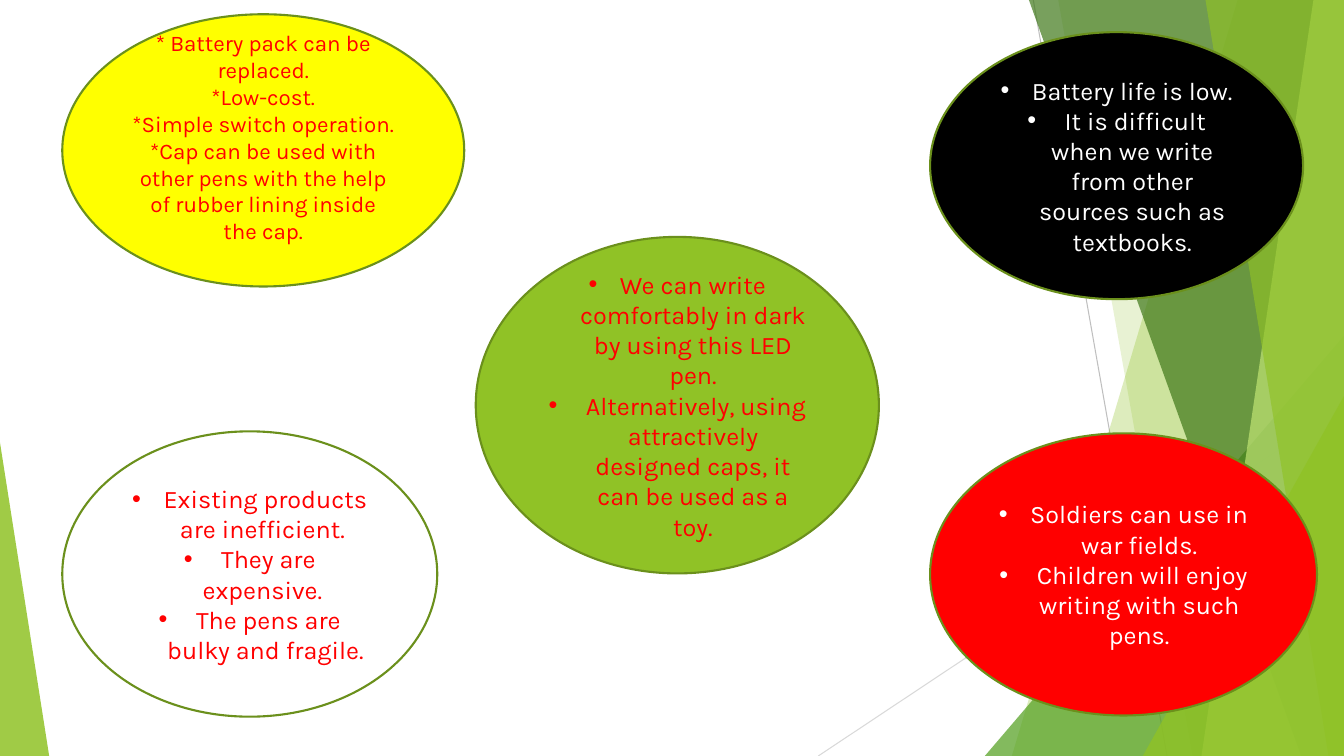
from lxml.etree import SubElement
from pptx import Presentation
from pptx.dml.color import RGBColor
from pptx.enum.shapes import MSO_CONNECTOR, MSO_SHAPE
from pptx.enum.text import MSO_ANCHOR, PP_ALIGN
from pptx.oxml.ns import qn
from pptx.util import Cm, Pt

WIDTH, HEIGHT = 33.87, 19.05
WHITE = RGBColor(0xFF, 0xFF, 0xFF)
BLACK = RGBColor(0x00, 0x00, 0x00)
RED = RGBColor(0xFF, 0x00, 0x00)
YELLOW = RGBColor(0xFF, 0xFF, 0x00)
GREEN = RGBColor(0x90, 0xC2, 0x26)
MID_GREEN = RGBColor(0x54, 0xA0, 0x21)
DARK_GREEN = RGBColor(0x3F, 0x78, 0x19)
PALE_GREEN = RGBColor(0xC0, 0xE4, 0x74)
OUTLINE = RGBColor(0x6B, 0x90, 0x1C)
GREY = RGBColor(0xBF, 0xBF, 0xBF)
LIGHT_GREY = RGBColor(0xD9, 0xD9, 0xD9)


def write(para, text, size=18, color=RED, font="Karla", bullet=True):
    para.alignment = PP_ALIGN.CENTER
    span = para.add_run()
    span.text = text
    span.font.name = font
    span.font.size = Pt(size)
    span.font.color.rgb = color
    if bullet:
        properties = para._p.get_or_add_pPr()
        properties.set("marL", str(Cm(0.79)))
        properties.set("indent", str(-Cm(0.79)))
        SubElement(properties, qn("a:buFont"), typeface="Arial")
        SubElement(properties, qn("a:buChar"), char="•")


class PenSlide:
    """Draws the facets and the ovals of one slide in a shared style."""

    def __init__(self, page, outline=OUTLINE):
        self.page = page
        self.outline = outline

    def line(self, start, end, color):
        points = [Cm(value) for value in (*start, *end)]
        connector = self.page.shapes.add_connector(MSO_CONNECTOR.STRAIGHT, *points)
        connector.line.color.rgb = color
        connector.line.width = Pt(0.75)
        SubElement(connector._element.spPr, qn("a:effectLst"))

    def tint(self, shape, color, opacity):
        shape.shadow.inherit = False
        shape.fill.solid()
        shape.fill.fore_color.rgb = color
        shape.line.fill.background()
        fill = shape._element.spPr.find(qn("a:solidFill"))
        SubElement(fill[0], qn("a:alpha"), val=str(opacity * 1000))

    def facet(self, top_x, bottom_x, color, opacity):
        corners = [(WIDTH, 0), (WIDTH, HEIGHT), (bottom_x, HEIGHT)]
        builder = self.page.shapes.build_freeform(Cm(top_x), Cm(0))
        builder.add_line_segments([(Cm(x), Cm(y)) for x, y in corners], close=True)
        self.tint(builder.convert_to_shape(), color, opacity)

    def triangle(self, left, top, width, apex, color, opacity):
        place = [Cm(value) for value in (left, top, width, HEIGHT - top)]
        shape = self.page.shapes.add_shape(MSO_SHAPE.ISOSCELES_TRIANGLE, *place)
        shape.adjustments[0] = apex
        self.tint(shape, color, opacity)

    def oval(self, place, fill, lines, bottom_inset=0.13, **style):
        shape = self.page.shapes.add_shape(MSO_SHAPE.OVAL, *[Cm(value) for value in place])
        shape.shadow.inherit = False
        shape.fill.solid()
        shape.fill.fore_color.rgb = fill
        shape.line.color.rgb = self.outline
        shape.line.width = Pt(1.5)
        frame = shape.text_frame
        frame.word_wrap = True
        frame.vertical_anchor = MSO_ANCHOR.MIDDLE
        frame.margin_bottom = Cm(bottom_inset)
        for index, text in enumerate(lines):
            para = frame.add_paragraph() if index else frame.paragraphs[0]
            write(para, text, **style)


def main():
    deck = Presentation()
    deck.slide_width, deck.slide_height = Cm(WIDTH), Cm(HEIGHT)
    slide = PenSlide(deck.slides.add_slide(deck.slide_layouts[6]))

    slide.line((26.04, 0), (29.41, HEIGHT), GREY)
    slide.line((WIDTH, 10.24), (20.62, HEIGHT), LIGHT_GREY)
    slide.facet(31.19, 25.5, GREEN, 30)
    slide.facet(26.67, 30.05, GREEN, 20)
    slide.triangle(24.82, 8.46, 9.05, 1, MID_GREEN, 72)
    slide.facet(25.93, 32.79, DARK_GREEN, 70)
    slide.facet(33.1, 30.28, PALE_GREEN, 70)
    slide.facet(30.38, 33.48, GREEN, 65)
    slide.triangle(28.8, 9.98, 5.07, 1, GREEN, 80)
    slide.triangle(0, 11.15, 1.24, 0, GREEN, 85)

    slide.oval((1.57, 0.36, 10.13, 6.86), YELLOW, [
        "* Battery pack can be replaced.",
        "*Low-cost.",
        "*Simple switch operation.",
        "*Cap can be used with other pens with the help of rubber lining inside the cap.",
    ], bottom_inset=0.81, size=16, bullet=False)
    slide.oval((1.57, 10.87, 9.45, 7.19), WHITE, [
        "Existing products are inefficient. ",
        " They are expensive. ",
        " The pens are bulky and fragile.",
    ])
    slide.oval((23.44, 0.81, 9.4, 6.73), BLACK, [
        "Battery life is low.",
        " It is difficult when we write from other sources such as textbooks.",
    ], color=WHITE)
    slide.oval((23.44, 10.92, 9.75, 7.11), RED, [
        "Soldiers can use in war fields.",
        " Children will enjoy writing with such pens.",
    ], color=WHITE)
    slide.oval((11.99, 5.97, 10.16, 8.48), GREEN, [
        "We can write comfortably in dark by using this LED pen.",
        " Alternatively, using attractively designed caps, it can be used as a toy.",
    ])
    deck.save("out.pptx")


if __name__ == "__main__":
    main()
